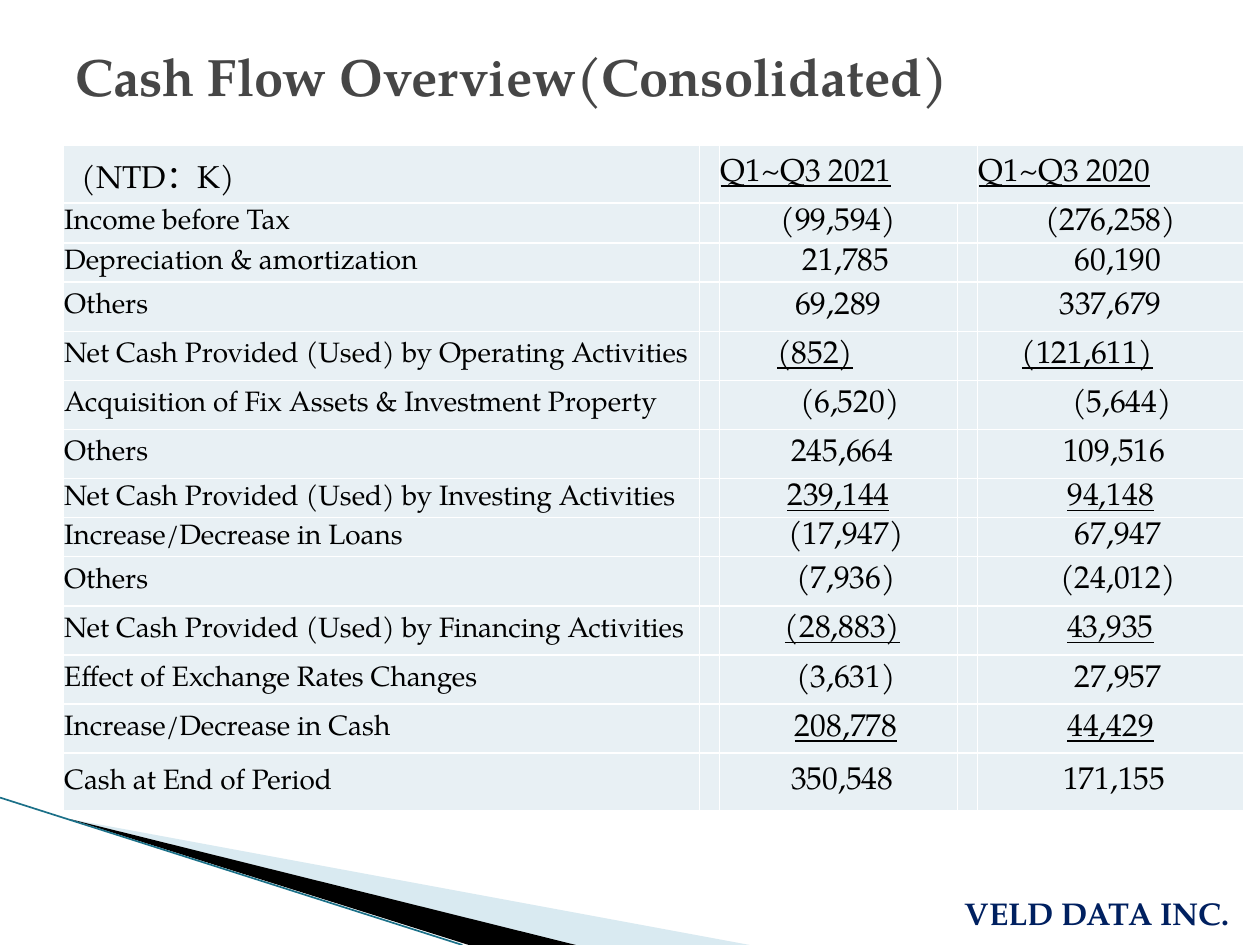
from dataclasses import dataclass
from lxml import etree
from pptx import Presentation
from pptx import util as u
from pptx.dml.color import RGBColor
from pptx.enum import shapes, text
from pptx.oxml import ns

Inches, Pt = u.Inches, u.Pt


@dataclass(frozen=True)
class Theme:
    face: str = "TeX Gyre Pagella"
    ink: str = "000000"
    head: str = "464646"
    navy: str = "002060"
    cell: str = "E8F0F4"
    rule: str = "FFFFFF"
    pale: str = "A0CBDC"
    teal: str = "1B7088"
    title: int = 30
    body: int = 18
    label: int = 16


T = Theme()
COLS = [5.05, 0.16, 1.89, 0.16, 2.11]
TALL, MID, LOW = 0.46, 0.39, 0.31
SPACE = 0.06  # width of one space at body size


@dataclass(frozen=True)
class Sum:
    """Underlined total: line start in its cell, lead to the text, line length."""
    text: str
    left: float
    lead: float
    size: float
    tail: bool = True


# Row height, label, then a (value, shift in spaces) pair or a Sum per year
ROWS = [
    (0.32, "Income before Tax", ("(99,594)", 0), ("(276,258)", 0)),
    (LOW, "Depreciation & amortization", ("21,785", 2), ("60,190", 2)),
    (MID, "Others", ("69,289", 0), ("337,679", 0)),
    (MID, "Net Cash Provided (Used) by Operating Activities",
     Sum("(852)", 0.46, 0, 0.97), Sum("(121,611)", 0.35, 0, 1.4)),
    (MID, "Acquisition of Fix Assets & Investment Property",
     ("(6,520)", 3), ("(5,644)", 3)),
    (MID, "Others", ("245,664", 1), ("109,516", 1)),
    (MID, "Net Cash Provided (Used) by Investing Activities",
     ("239,144", 0, True), ("94,148", 0, True)),
    (LOW, "Increase/Decrease in Loans", ("(17,947)", 2), ("67,947", 2)),
    (LOW, "Others", ("(7,936)", 2), ("(24,012)", 2)),
    (MID, "Net Cash Provided (Used) by Financing Activities",
     Sum("(28,883)", 0.39, 0.13, 1.1), Sum("43,935", 0.58, 0.13, 0.93)),
    (MID, "Effect of Exchange Rates Changes", ("(3,631)", 2), ("27,957", 2)),
    (MID, "Increase/Decrease in Cash",
     Sum("208,778", 0.47, 0.13, 0.93, False), ("44,429", 0, True)),
    (TALL, "Cash at End of Period", ("350,548", 1), ("171,155", 1)),
]
# The two "Others" rows that follow a low row keep the middle height
ROWS[8] = (MID, *ROWS[8][1:])
ROWS[6] = (LOW, *ROWS[6][1:])


def assign(obj, **vals):
    for key, val in vals.items():
        setattr(obj, key, val)


def write(para, words, size, color=T.ink, **more):
    run = para.add_run()
    run.text = words
    assign(run.font, name=T.face, size=Pt(size), **more)
    run.font.color.rgb = RGBColor.from_string(color)


def add(parent, tag, **attrs):
    return etree.SubElement(parent, ns.qn(tag), attrs)


def wedge(slide, pts, color, alpha=None):
    pts = [(Inches(x), Inches(y)) for x, y in pts]
    pen = slide.shapes.build_freeform(*pts[0])
    pen.add_line_segments(pts[1:], close=True)
    form = pen.convert_to_shape()
    form.shadow.inherit = False
    form.fill.solid()
    form.fill.fore_color.rgb = RGBColor.from_string(color)
    form.line.fill.background()
    if alpha:
        tone = form.fill._xPr.find(".//" + ns.qn("a:srgbClr"))
        add(tone, "a:alpha", val=str(alpha * 1000))


def corner(slide, x, y):
    """Swoosh at the lower left, measured from its tip."""
    wedge(slide, [(x, y), (x + 5.4, y + 1), (x + 4.01, y + 1)], T.pale, 40)
    wedge(slide, [(x, y), (x + 4.02, y + 1), (x + 3.17, y + 1)], T.ink)
    line = slide.shapes.add_connector(
        shapes.MSO_CONNECTOR.STRAIGHT, 0, Inches(y - 0.17),
        Inches(x + 3.12), Inches(y + 1))
    line.line.color.rgb = RGBColor.from_string(T.teal)
    line.line.width = Pt(0.95)
    add(line._element.spPr, "a:effectLst")


def dress(cell):
    """Fill, insets and white rules of one cell."""
    assign(cell, margin_left=Inches(0.01), margin_right=Inches(0.01),
           margin_top=Inches(0.01), margin_bottom=0,
           vertical_anchor=text.MSO_ANCHOR.MIDDLE)
    cell.fill.solid()
    cell.fill.fore_color.rgb = RGBColor.from_string(T.cell)
    props = cell._tc.get_or_add_tcPr()
    for spot, side in enumerate("LRTB"):
        edge = etree.Element(ns.qn("a:ln" + side), {"w": str(Pt(1))})
        add(add(edge, "a:solidFill"), "a:srgbClr", val=T.rule)
        props.insert(spot, edge)
    end = cell.text_frame.paragraphs[0]._p.get_or_add_endParaRPr()
    end.set("sz", "800")


def figure(cell, item):
    para = cell.text_frame.paragraphs[0]
    if isinstance(item, Sum):
        # Tabs carry the underline past the digits
        cell.margin_left = Inches(item.left)
        tabs = add(para._p.get_or_add_pPr(), "a:tabLst")
        stops = [item.lead] * bool(item.lead) + [item.size] * item.tail
        for stop in stops:
            add(tabs, "a:tab", pos=str(Inches(stop)), algn="l")
        words = "\t" * bool(item.lead) + item.text + "\t" * item.tail
        write(para, words, T.body, underline=True)
        return
    words, shift, *under = item
    cell.margin_left = Inches(0.01 + shift * SPACE)
    para.alignment = text.PP_ALIGN.CENTER
    write(para, words, T.body, underline=bool(under))


def grid(slide, x, y):
    highs = [TALL] + [row[0] for row in ROWS]
    table = slide.shapes.add_table(
        len(highs), len(COLS), Inches(x), Inches(y),
        Inches(sum(COLS)), Inches(sum(highs))).table
    assign(table, first_row=False, horz_banding=False)
    for col, wide in zip(table.columns, COLS):
        col.width = Inches(wide)
    for row, high in zip(table.rows, highs):
        row.height = Inches(high)
        for cell in row.cells:
            dress(cell)

    # Header row
    table.cell(0, 2).merge(table.cell(0, 3))
    table.cell(0, 0).margin_left = Inches(0.15)
    heads = {0: "(NTD：K)", 2: "Q1~Q3 2021", 4: "Q1~Q3 2020"}
    for col, words in heads.items():
        para = table.cell(0, col).text_frame.paragraphs[0]
        write(para, words, T.body, underline=col > 0)

    # Body rows
    for num, (_, label, now, past) in enumerate(ROWS, 1):
        write(table.cell(num, 0).text_frame.paragraphs[0], label, T.label)
        figure(table.cell(num, 2), now)
        figure(table.cell(num, 4), past)


def caption(slide, box, words, size, color, wrap):
    frame = slide.shapes.add_textbox(*map(Inches, box)).text_frame
    frame.word_wrap = wrap
    write(frame.paragraphs[0], words, size, color, bold=True)


def main():
    deck = Presentation()
    assign(deck, slide_width=Inches(10), slide_height=Inches(7.5))
    slide = deck.slides.add_slide(deck.slide_layouts[6])
    corner(slide, 0.55, 6.5)
    grid(slide, 0.5, 1.15)
    caption(slide, (7.56, 7.05, 2.37, 0.4), "VELD DATA INC.",
            T.body, T.navy, False)
    caption(slide, (0.5, 0.3, 9, 1.25), "Cash Flow Overview(Consolidated)",
            T.title, T.head, True)
    deck.save("out.pptx")


if __name__ == "__main__":
    main()
